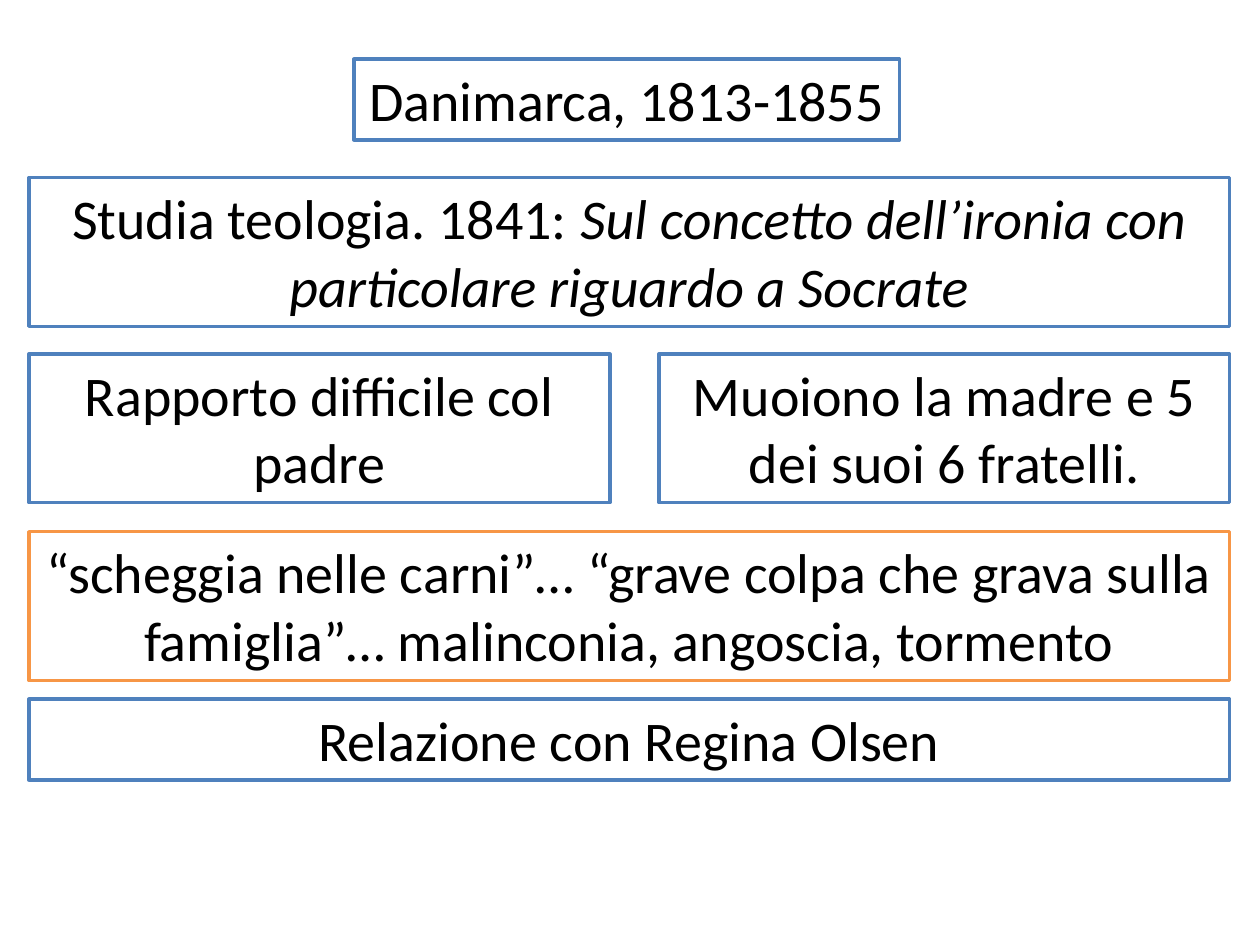
from pptx import Presentation
from pptx.dml.color import RGBColor
from pptx.enum.shapes import MSO_SHAPE
from pptx.enum.text import MSO_ANCHOR, MSO_AUTO_SIZE, PP_ALIGN
from pptx.util import Inches, Pt

WHITE = RGBColor(0xFF, 0xFF, 0xFF)
BLACK = RGBColor(0x00, 0x00, 0x00)
BLUE = RGBColor(0x4F, 0x81, 0xBD)
ORANGE = RGBColor(0xF7, 0x96, 0x46)

LEFT = 0.23
FULL_WIDTH = 9.53
ONE_LINE = 0.64
TWO_LINES = 1.18


class BoxSlide:
    """Holds the text style and the slide that receives the outlined boxes."""

    font_name = "Calibri"
    font_size = Pt(32)
    line_width = Pt(2)

    def __init__(self, presentation):
        self.slide = presentation.slides.add_slide(presentation.slide_layouts[6])

    def box(self, left, top, width, height, *runs, outline=BLUE):
        """Add a box; each run is a pair of text and italic flag."""
        shape = self.slide.shapes.add_shape(
            MSO_SHAPE.RECTANGLE,
            Inches(left), Inches(top), Inches(width), Inches(height))
        shape.shadow.inherit = False
        shape.fill.solid()
        shape.fill.fore_color.rgb = WHITE
        shape.line.color.rgb = outline
        shape.line.width = self.line_width

        frame = shape.text_frame
        frame.word_wrap = True
        frame.auto_size = MSO_AUTO_SIZE.SHAPE_TO_FIT_TEXT
        frame.vertical_anchor = MSO_ANCHOR.TOP
        paragraph = frame.paragraphs[0]
        paragraph.alignment = PP_ALIGN.CENTER
        for text, italic in runs:
            run = paragraph.add_run()
            run.text = text
            run.font.name = self.font_name
            run.font.size = self.font_size
            run.font.italic = italic
            run.font.color.rgb = BLACK


def main():
    presentation = Presentation()
    presentation.slide_width = Inches(10)
    presentation.slide_height = Inches(7.5)

    life = BoxSlide(presentation)
    life.box(2.81, 0.47, 4.33, ONE_LINE, ("Danimarca, 1813-1855", False))
    life.box(LEFT, 1.41, FULL_WIDTH, TWO_LINES,
             ("Studia teologia. 1841: ", False),
             ("Sul concetto dell’ironia con particolare riguardo a Socrate", True))
    life.box(LEFT, 2.81, 4.61, TWO_LINES, ("Rapporto difficile col padre", False))
    life.box(5.23, 2.81, 4.53, TWO_LINES,
             ("Muoiono la madre e 5 dei suoi 6 fratelli.", False))
    life.box(LEFT, 4.22, FULL_WIDTH, TWO_LINES,
             ("“scheggia nelle carni”… “grave colpa che grava sulla famiglia”… "
              "malinconia, angoscia, tormento", False),
             outline=ORANGE)
    life.box(LEFT, 5.55, FULL_WIDTH, ONE_LINE, ("Relazione con Regina Olsen", False))

    presentation.save("out.pptx")


if __name__ == "__main__":
    main()
